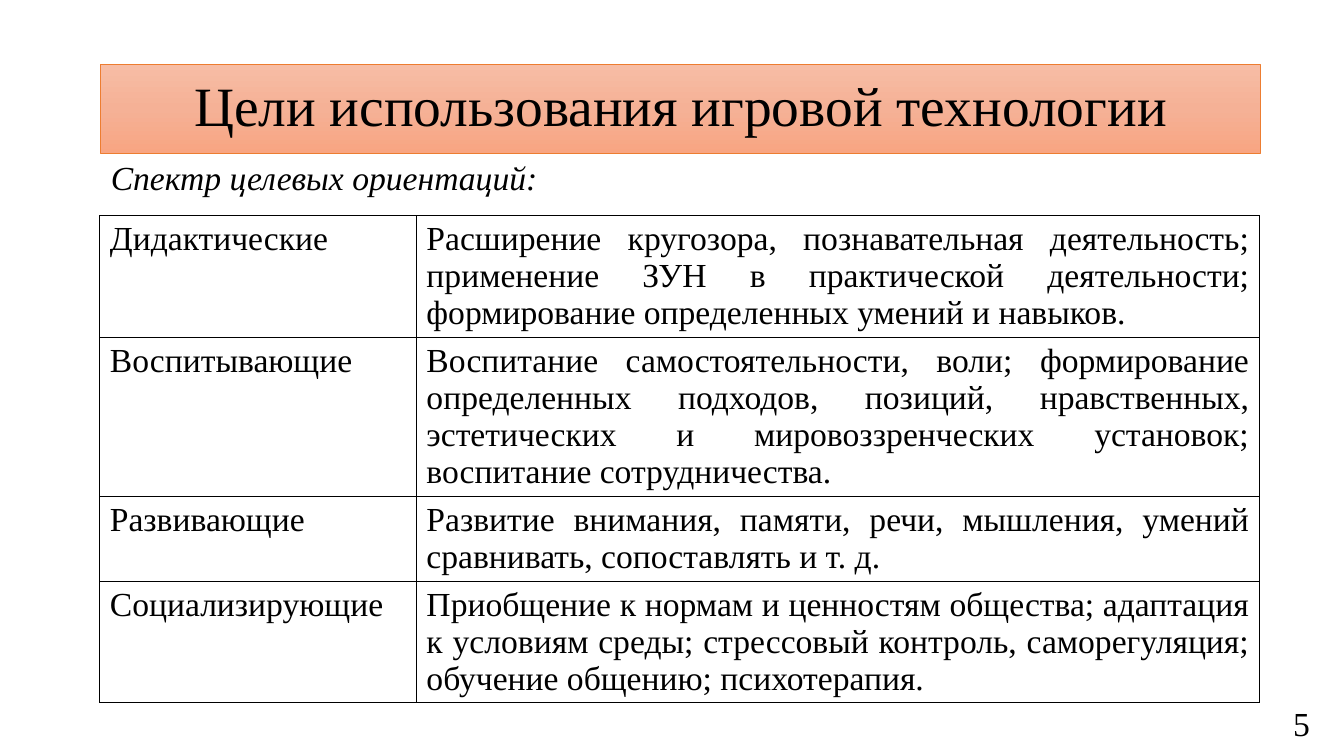
from copy import deepcopy

from lxml import etree
from pptx import Presentation
from pptx.dml.color import RGBColor
from pptx.enum.text import MSO_ANCHOR as Anchor, MSO_AUTO_SIZE as AutoSize, PP_ALIGN as Align
from pptx.oxml.ns import qn
from pptx.util import Inches, Pt

FONT = "Times New Roman"
TITLE = "Цели использования игровой технологии"
GOALS = [
    ("Дидактические",
     "Расширение кругозора, познавательная деятельность; применение ЗУН в "
     "практической деятельности; формирование определенных умений и навыков."),
    ("Воспитывающие",
     "Воспитание самостоятельности, воли; формирование определенных подходов, "
     "позиций, нравственных, эстетических и мировоззренческих установок; "
     "воспитание сотрудничества."),
    ("Развивающие",
     "Развитие внимания, памяти, речи, мышления, умений сравнивать, "
     "сопоставлять и т. д."),
    ("Социализирующие",
     "Приобщение к нормам и ценностям общества; адаптация к условиям среды; "
     "стрессовый контроль, саморегуляция; обучение общению; психотерапия."),
]
COL_WIDTHS = (3.14, 8.36)
ROW_HEIGHTS = (1.2, 1.58, 0.84, 1.2)


def rgb(color):
    return RGBColor.from_string(color)


def write(tf, text, align, size=24, italic=False):
    tf.text = text
    p = tf.paragraphs[0]
    p.alignment = align
    font = p.runs[0].font
    font.name, font.size, font.italic = FONT, Pt(size), italic
    font.color.rgb = rgb("000000")
    return p


def place(sp, box):
    sp.left, sp.top, sp.width, sp.height = [Inches(v) for v in box]


def add_title(slide, box):
    sp = slide.shapes.title
    place(sp, box)
    # Three-stop gradient running from top to bottom
    sp.fill.gradient()
    sp.fill.gradient_angle = 270
    stop_list = sp.element.spPr.find(".//" + qn("a:gsLst"))
    stop_list.append(deepcopy(stop_list[0]))
    stops = zip(sp.fill.gradient_stops, (0, 0.5, 1), ("F7BDA5", "F5B196", "F8A582"))
    for stop, position, color in stops:
        stop.position = position
        stop.color.rgb = rgb(color)
    sp.line.color.rgb = rgb("ED7D31")
    sp.line.width = Pt(0.5)
    # Heading text
    tf = sp.text_frame
    tf.auto_size = AutoSize.NONE
    tf.vertical_anchor = Anchor.MIDDLE
    write(tf, TITLE, Align.CENTER, 39.6).line_spacing = 0.9


def add_label(slide, box, text, align, italic=False, wrap=True, anchor=Anchor.TOP):
    sp = slide.shapes.add_textbox(*[Inches(v) for v in box])
    tf = sp.text_frame
    tf.word_wrap = wrap
    tf.vertical_anchor = anchor
    write(tf, text, align, italic=italic)


def add_borders(cell):
    tc_pr = cell._tc.get_or_add_tcPr()
    for i, side in enumerate(("lnL", "lnR", "lnT", "lnB")):
        ln = etree.Element(qn("a:" + side), w=str(Pt(1)))
        fill = etree.SubElement(ln, qn("a:solidFill"))
        etree.SubElement(fill, qn("a:srgbClr"), val="000000")
        tc_pr.insert(i, ln)


def add_goals_table(slide, box):
    frame = slide.shapes.add_table(len(GOALS), len(COL_WIDTHS), *[Inches(v) for v in box])
    table = frame.table
    table.first_row = table.horz_banding = False
    for column, width in zip(table.columns, COL_WIDTHS):
        column.width = Inches(width)
    for row, height, texts in zip(table.rows, ROW_HEIGHTS, GOALS):
        row.height = Inches(height)
        for cell, text in zip(row.cells, texts):
            cell.fill.background()
            add_borders(cell)
            write(cell.text_frame, text, Align.JUSTIFY)


def main():
    prs = Presentation()
    prs.slide_width, prs.slide_height = Inches(13.33), Inches(7.5)
    slide = prs.slides.add_slide(prs.slide_layouts[5])
    add_title(slide, (1, 0.64, 11.5, 0.88))
    add_goals_table(slide, (0.99, 2.14, sum(COL_WIDTHS), sum(ROW_HEIGHTS)))
    # Subheading and page number
    add_label(slide, (1, 1.51, 4.48, 0.5), "Спектр целевых ориентаций:",
              Align.LEFT, italic=True, wrap=False)
    add_label(slide, (10.09, 6.97, 3, 0.4), "5", Align.RIGHT, anchor=Anchor.MIDDLE)
    prs.save("out.pptx")


if __name__ == "__main__":
    main()
